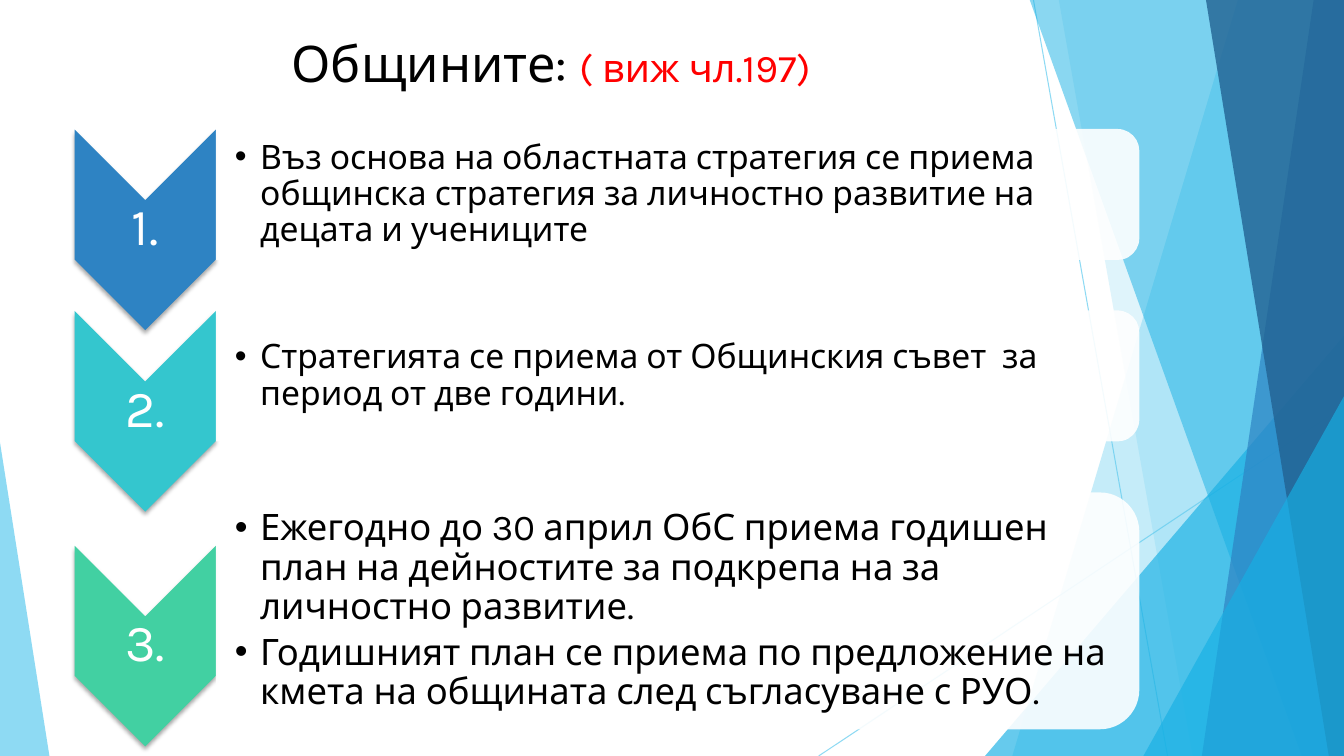
from dataclasses import dataclass

import pptx
import pptx.dml.color
import pptx.enum.shapes
import pptx.enum.text
import pptx.oxml
import pptx.oxml.ns
import pptx.presentation
import pptx.shapes.autoshape
import pptx.shapes.base
import pptx.slide
import pptx.text.text
import pptx.util
from lxml import etree

Inches = pptx.util.Inches
Pt = pptx.util.Pt
qn = pptx.oxml.ns.qn
MSO_SHAPE = pptx.enum.shapes.MSO_SHAPE
ANCHOR = pptx.enum.text.MSO_ANCHOR
ALIGN = pptx.enum.text.PP_ALIGN


@dataclass(frozen=True)
class Theme:
    font: str = "Karla"
    text: str = "000000"
    accent: str = "FF0000"
    white: str = "FFFFFF"
    sky: str = "5FCBEF"
    cyan: str = "17B0E4"
    blue: str = "2E83C3"
    navy: str = "226292"
    teal: str = "34C6CE"
    green: str = "42D0A2"
    title_size: float = 36
    reference_size: float = 28
    number_size: float = 37


@dataclass(frozen=True)
class Ray:
    start: tuple[float, float]
    end: tuple[float, float]


@dataclass(frozen=True)
class Slab:
    """A band from a slanted left edge to the right edge of the slide."""
    top_x: float
    bottom_x: float
    color: str
    opacity: int


@dataclass(frozen=True)
class Wedge:
    """A right triangle standing on the bottom edge of the slide."""
    left: float
    top: float
    width: float
    apex: float
    color: str
    opacity: int


@dataclass(frozen=True)
class Step:
    number: str
    center_y: float
    panel_height: float
    color: str
    size: float
    points: tuple[str, ...]


THEME = Theme()
SLIDE_W, SLIDE_H = 13.33, 7.5
SLAB_TOP = -0.01
STEP_LEFT, CHEVRON_W, CHEVRON_H = 0.74, 1.4, 1.99
PANEL_LEFT, PANEL_W, PANEL_RISE = 2.14, 9.16, 0.35
LABEL_H = 0.6

RAYS = [Ray((10.25, 0), (11.58, SLIDE_H)), Ray((SLIDE_W, 4.03), (8.12, SLIDE_H))]
FACETS: list[Slab | Wedge] = [
    Slab(12.28, 10.04, THEME.sky, 36),
    Slab(10.5, 11.83, THEME.sky, 20),
    Wedge(9.77, 3.33, 3.56, 1, THEME.cyan, 66),
    Slab(10.21, 12.91, THEME.cyan, 50),
    Slab(13.03, 11.92, THEME.blue, 70),
    Slab(11.96, 13.18, THEME.navy, 80),
    Wedge(11.34, 3.93, 1.99, 1, THEME.cyan, 66),
    Wedge(0, 4.39, 0.49, 0, THEME.sky, 70),
]
STEPS = [
    Step("1.", 2.28, 1.3, THEME.blue, 24, (
        "Въз основа на областната стратегия се приема общинска стратегия "
        "за личностно развитие на децата и учениците",)),
    Step("2.", 4.08, 1.3, THEME.teal, 24, (
        "Стратегията се приема от Общинския съвет  за период от две години.",)),
    Step("3.", 6.41, 2.35, THEME.green, 26, (
        "Ежегодно до 30 април ОбС приема годишен план на дейностите "
        "за подкрепа на за личностно развитие.",
        "Годишният план се приема по предложение на кмета на общината "
        "след съгласуване с РУО.")),
]


def rgb(color: str) -> pptx.dml.color.RGBColor:
    return pptx.dml.color.RGBColor.from_string(color)


def set_opacity(element: etree._Element, percent: int) -> None:
    for color in element.iter(qn("a:srgbClr")):
        etree.SubElement(color, qn("a:alpha")).set("val", str(percent * 1000))


def paint(shape: pptx.shapes.autoshape.Shape, color: str, opacity: int = 100) -> None:
    shape.shadow.inherit = False
    shape.fill.solid()
    shape.fill.fore_color.rgb = rgb(color)
    shape.line.fill.background()
    if opacity < 100:
        set_opacity(shape.element.spPr, opacity)


def style_run(run: pptx.text.text._Run, size: float, color: str) -> None:
    run.font.name = THEME.font
    run.font.size = Pt(size)
    run.font.bold = False
    run.font.color.rgb = rgb(color)


def set_frame(frame: pptx.text.text.TextFrame, left: float, rest: float,
              anchor: pptx.enum.text.MSO_ANCHOR) -> None:
    frame.word_wrap = True
    frame.auto_size = pptx.enum.text.MSO_AUTO_SIZE.NONE
    frame.vertical_anchor = anchor
    frame.margin_left = Inches(left)
    frame.margin_top = frame.margin_right = frame.margin_bottom = Inches(rest)


def place(shape: pptx.shapes.base.BaseShape, left: float, top: float,
          width: float, height: float) -> None:
    shape.left, shape.top = Inches(left), Inches(top)
    shape.width, shape.height = Inches(width), Inches(height)


def draw_ray(slide: pptx.slide.Slide, ray: Ray) -> None:
    line = slide.shapes.add_connector(
        pptx.enum.shapes.MSO_CONNECTOR.STRAIGHT,
        *(Inches(value) for value in ray.start + ray.end))
    line.line.color.rgb = rgb(THEME.sky)
    line.line.width = Pt(0.75)
    set_opacity(line.element.spPr, 70)
    etree.SubElement(line.element.spPr, qn("a:effectLst"))


def draw_facet(slide: pptx.slide.Slide, facet: Slab | Wedge) -> None:
    if isinstance(facet, Slab):
        corners = [(facet.top_x, SLAB_TOP), (SLIDE_W, SLAB_TOP),
                   (SLIDE_W, SLIDE_H), (facet.bottom_x, SLIDE_H)]
        start, *others = [(Inches(x), Inches(y)) for x, y in corners]
        outline = slide.shapes.build_freeform(*start)
        outline.add_line_segments(others, close=True)
        shape = outline.convert_to_shape()
    else:
        shape = slide.shapes.add_shape(
            MSO_SHAPE.ISOSCELES_TRIANGLE, Inches(facet.left), Inches(facet.top),
            Inches(facet.width), Inches(SLIDE_H - facet.top))
        shape.adjustments[0] = facet.apex
    paint(shape, facet.color, facet.opacity)


def add_turned(slide: pptx.slide.Slide, kind: MSO_SHAPE, left: float, center_y: float,
               width: float, height: float) -> pptx.shapes.autoshape.Shape:
    """Add a shape turned by 90 degrees that shows with the given width and height."""
    shape = slide.shapes.add_shape(
        kind, Inches(left + (width - height) / 2), Inches(center_y - width / 2),
        Inches(height), Inches(width))
    shape.rotation = 90
    return shape


def add_soft_shadow(shape: pptx.shapes.autoshape.Shape) -> None:
    effects = shape.element.spPr.find(qn("a:effectLst"))
    shadow = etree.SubElement(effects, qn("a:outerShdw"), blurRad=str(Pt(3)),
                              dist=str(Pt(2)), dir="5400000", rotWithShape="0")
    etree.SubElement(shadow, qn("a:srgbClr"), val=THEME.text)
    set_opacity(shadow, 35)


def add_bullet(paragraph: pptx.text.text._Paragraph) -> None:
    properties = paragraph._p.get_or_add_pPr()
    properties.set("marL", str(Inches(0.25)))
    properties.set("indent", str(-Inches(0.25)))
    etree.SubElement(properties, qn("a:buFont"), typeface="Arial")
    etree.SubElement(properties, qn("a:buChar"), char="•")


def draw_step(slide: pptx.slide.Slide, step: Step,
              body: pptx.shapes.base.BaseShape) -> None:
    chevron = add_turned(slide, MSO_SHAPE.CHEVRON, STEP_LEFT, step.center_y,
                         CHEVRON_W, CHEVRON_H)
    paint(chevron, step.color)
    add_soft_shadow(chevron)

    number = slide.shapes.add_textbox(
        Inches(STEP_LEFT), Inches(step.center_y - LABEL_H / 2 - 0.01),
        Inches(CHEVRON_W), Inches(LABEL_H)).text_frame
    set_frame(number, 0.03, 0.03, ANCHOR.MIDDLE)
    number.text = step.number
    number.paragraphs[0].alignment = ALIGN.CENTER
    number.paragraphs[0].line_spacing = 0.9
    style_run(number.paragraphs[0].runs[0], THEME.number_size, THEME.white)

    panel_y = step.center_y - PANEL_RISE
    panel = add_turned(slide, MSO_SHAPE.ROUND_2_SAME_RECTANGLE, PANEL_LEFT, panel_y,
                       PANEL_W, step.panel_height)
    paint(panel, THEME.white, 90)

    inset = step.panel_height * 0.05
    body_height = step.panel_height - 2 * inset
    place(body, PANEL_LEFT, panel_y - body_height / 2, PANEL_W - inset, body_height)
    set_frame(body.text_frame, 0.19, 0.02, ANCHOR.MIDDLE)
    body.text_frame.text = "\n".join(step.points)
    for paragraph in body.text_frame.paragraphs:
        paragraph.alignment = ALIGN.LEFT
        paragraph.line_spacing = 0.9
        paragraph.space_before = Pt(0)
        paragraph.space_after = Pt(4.5)
        add_bullet(paragraph)
        style_run(paragraph.runs[0], step.size, THEME.text)
    slide.shapes.element.append(body.element)


def fill_title(title: pptx.shapes.base.BaseShape) -> None:
    place(title, 0.74, 0.27, 9.4, 0.85)
    set_frame(title.text_frame, 0.1, 0.05, ANCHOR.TOP)
    heading = title.text_frame.paragraphs[0]
    heading.text = "Общините: "
    heading.alignment = ALIGN.CENTER
    reference = heading.add_run()
    reference.text = "( виж чл.197)"
    style_run(heading.runs[0], THEME.title_size, THEME.text)
    style_run(reference, THEME.reference_size, THEME.accent)


def main() -> None:
    deck = pptx.Presentation()
    deck.slide_width, deck.slide_height = Inches(SLIDE_W), Inches(SLIDE_H)
    slide = deck.slides.add_slide(deck.slide_layouts.get_by_name("Comparison"))
    title, *bodies = slide.placeholders
    for ray in RAYS:
        draw_ray(slide, ray)
    for facet in FACETS:
        draw_facet(slide, facet)
    fill_title(title)
    slide.shapes.element.append(title.element)
    for step, body in zip(STEPS, bodies):
        draw_step(slide, step, body)
    for unused in bodies[len(STEPS):]:
        slide.shapes.element.remove(unused.element)
    deck.save("out.pptx")


if __name__ == "__main__":
    main()
